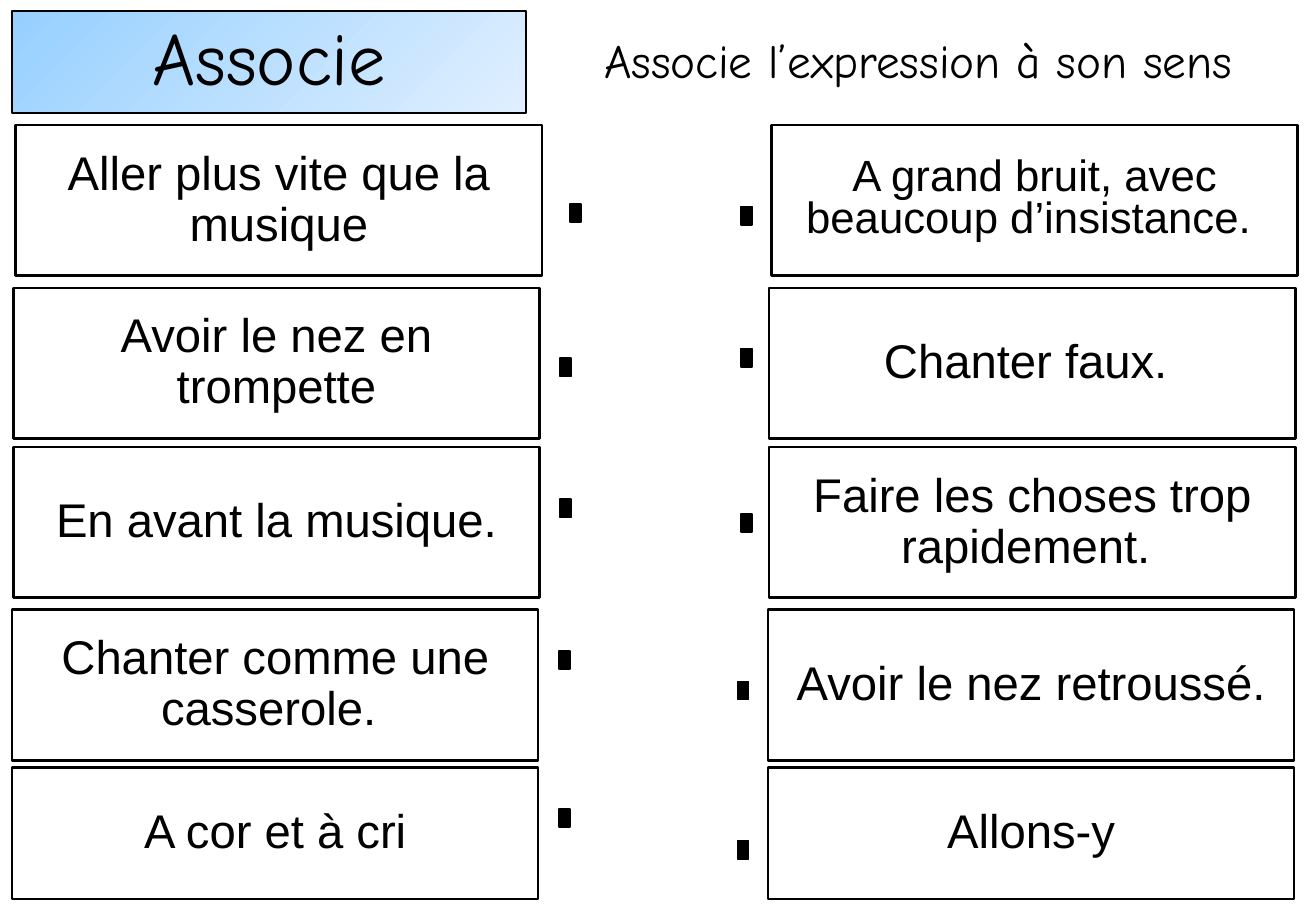
from pptx import Presentation
from pptx.dml.color import RGBColor
from pptx.enum.shapes import MSO_SHAPE
from pptx.enum.text import MSO_ANCHOR, PP_ALIGN
from pptx.util import Pt

PX = 9144  # 100 px to the inch
BLACK = "000000"


def color(code):
    return RGBColor.from_string(code)


def box(x, y, w, h, text="", size=28, font="Arial", edge=1.5, lead=0.9, gap=10):
    """Add an unfilled rectangle with centred text; edge 0 leaves out the line."""
    rect = slide.shapes.add_shape(
        MSO_SHAPE.RECTANGLE, x * PX, y * PX, w * PX, h * PX)
    rect.shadow.inherit = False
    rect.fill.background()
    if edge:
        rect.line.color.rgb = color(BLACK)
        rect.line.width = Pt(edge)
    else:
        rect.line.fill.background()
    if text:
        frame = rect.text_frame
        frame.word_wrap = True
        frame.vertical_anchor = MSO_ANCHOR.MIDDLE
        para = frame.paragraphs[0]
        para.text = text
        para.alignment = PP_ALIGN.CENTER
        para.line_spacing = lead
        para.space_before = Pt(gap)
        para.font.name = font
        para.font.size = Pt(size)
        para.font.color.rgb = color(BLACK)
    return rect


deck = Presentation()
deck.slide_width = 1083 * PX
deck.slide_height = 750 * PX
slide = deck.slides.add_slide(deck.slide_layouts[6])

title = box(10, 9, 423, 84, "Associe", 44, "Comic Neue", gap=0)
title.fill.gradient()
title.fill.gradient_angle = 315
for stop, code in zip(title.fill.gradient_stops, ("96D0FF", "E0EFFF")):
    stop.color.rgb = color(code)

box(437, 10, 637, 84, "Associe l’expression à son sens", 28, "Comic Neue", edge=0)

# left edge, top, height, expression, its dot (x, y), meaning, its dot (x, y)
rows = [
    (13, 103, 124, "Aller plus vite que la musique", (469, 168),
     "A grand bruit, avec beaucoup d’insistance. ", (610, 170)),
    (11, 237, 124, "Avoir le nez en trompette", (461, 295),
     "Chanter faux. ", (610, 287)),
    (11, 368, 124, "En avant la musique.", (461, 411),
     "Faire les choses trop rapidement. ", (610, 423)),
    (10, 502, 124, "Chanter comme une casserole. ", (460, 536),
     "Avoir le nez retroussé.", (607, 561)),
    (10, 632, 108, "A cor et à cri", (460, 666),
     "Allons-y", (607, 692)),
]
WIDTH, SHIFT = 433, 622

for row, (x, y, h, phrase, near, sense, far) in enumerate(rows):
    size, lead = (25.9, 0.8) if row == 0 else (28, 0.9)
    box(x, y, WIDTH, h, phrase)
    box(x + SHIFT, y, WIDTH, h, sense, size, lead=lead)
    for left, top in (near, far):
        dot = box(left, top, 9, 15, edge=1)
        dot.fill.solid()
        dot.fill.fore_color.rgb = color(BLACK)

deck.save("out.pptx")
